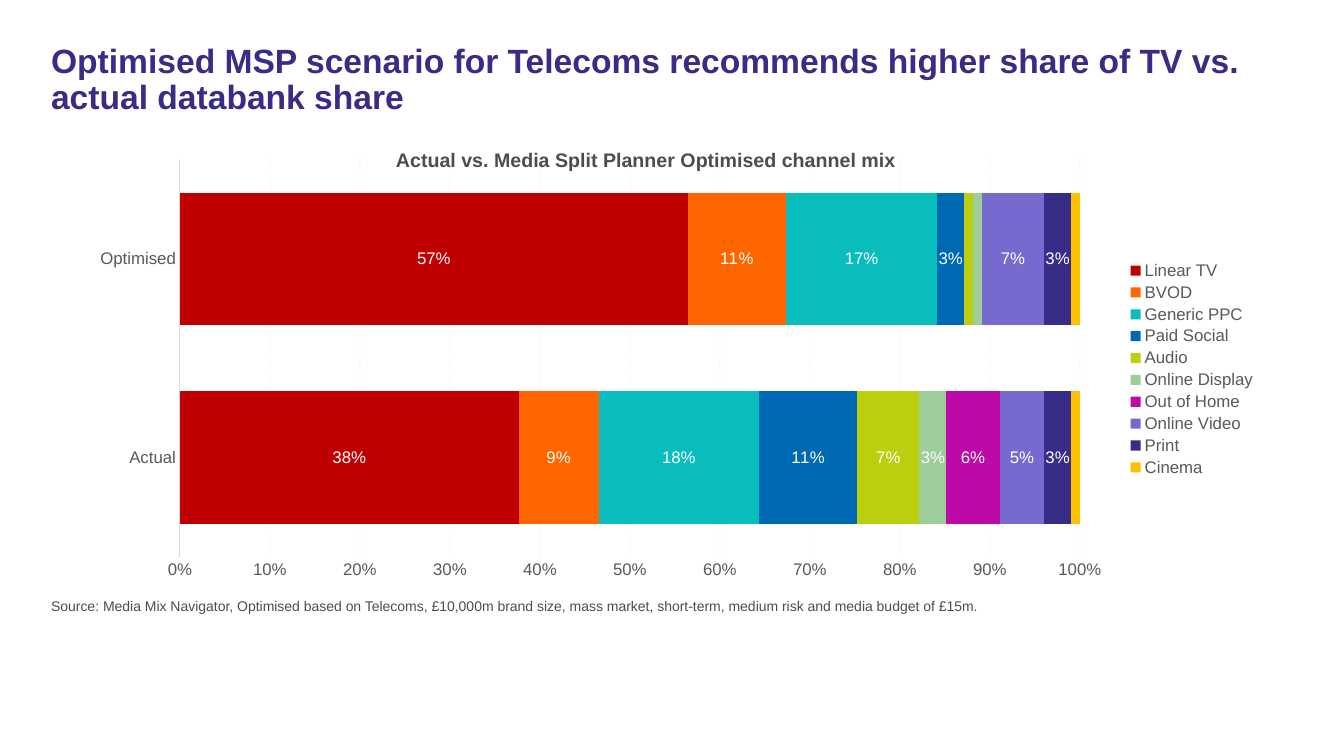
from lxml import etree
from pptx import Presentation
from pptx.chart.data import CategoryChartData
from pptx.dml.color import RGBColor
from pptx.enum.chart import XL_CHART_TYPE, XL_LABEL_POSITION, XL_LEGEND_POSITION, XL_TICK_MARK
from pptx.enum.dml import MSO_LINE
from pptx.enum.text import MSO_ANCHOR, MSO_AUTO_SIZE, PP_ALIGN
from pptx.oxml.ns import qn
from pptx.util import Emu, Pt

BAR_STACKED_100 = XL_CHART_TYPE.BAR_STACKED_100
LABEL_CENTER = XL_LABEL_POSITION.CENTER
LEGEND_RIGHT = XL_LEGEND_POSITION.RIGHT
NO_TICK = XL_TICK_MARK.NONE
DASH = MSO_LINE.DASH
TOP = MSO_ANCHOR.TOP
NO_AUTOFIT = MSO_AUTO_SIZE.NONE
LEFT = PP_ALIGN.LEFT

EMU_PER_PX = 914400 / 100.8
FONT = "Arial"
PURPLE, DARK_GREY, GREY, LIGHT_GREY, WHITE = "372D87", "4D4D4D", "595959", "D9D9D9", "FFFFFF"

CATEGORIES = ["Actual", "Optimised"]
# Channel, actual share, optimised share, colour, categories with a label
CHANNELS = [
    ("Linear TV", 0.38, 0.57, "C00000", CATEGORIES),
    ("BVOD", 0.09, 0.11, "FF6600", CATEGORIES),
    ("Generic PPC", 0.18, 0.17, "09BDBD", CATEGORIES),
    ("Paid Social", 0.11, 0.03, "0069B4", CATEGORIES),
    ("Audio", 0.07, 0.01, "BCCF0F", ["Actual"]),
    ("Online Display", 0.03, 0.01, "9CCD9A", ["Actual"]),
    ("Out of Home", 0.06, 0, "BD09A7", ["Actual"]),
    ("Online Video", 0.05, 0.07, "766ACE", CATEGORIES),
    ("Print", 0.03, 0.03, "372D87", CATEGORIES),
    ("Cinema", 0.01, 0.01, "FFC000", []),
]


def px(length):
    return Emu(round(length * EMU_PER_PX))


def color(hex_string):
    return RGBColor.from_string(hex_string)


def format_font(font, size, hex_string, bold=False):
    font.name = FONT
    font.size = Pt(size)
    font.bold = bold
    font.color.rgb = color(hex_string)


def write(shape, text, size=12, hex_string=DARK_GREY, bold=False, line_spacing=1.0):
    frame = shape.text_frame
    frame.word_wrap = True
    frame.auto_size = NO_AUTOFIT
    frame.vertical_anchor = TOP
    frame.text = text
    paragraph = frame.paragraphs[0]
    paragraph.alignment = LEFT
    paragraph.line_spacing = line_spacing
    paragraph.space_before = Pt(0)
    format_font(paragraph.runs[0].font, size, hex_string, bold)
    return paragraph


class SlideBuilder:
    def __init__(self, presentation):
        self.slide = presentation.slides.add_slide(presentation.slide_layouts[1])

    def placeholder(self, index, box, text, **style):
        shape = self.slide.placeholders[index]
        shape.left, shape.top, shape.width, shape.height = map(px, box)
        return write(shape, text, **style)

    def title(self, box, text, **style):
        self.placeholder(0, box, text, **style)

    def body(self, box, text, **style):
        paragraph = self.placeholder(1, box, text, **style)
        properties = paragraph._p.get_or_add_pPr()
        properties.set("marL", "0")
        properties.set("indent", "0")
        properties.insert_element_before(
            properties.makeelement(qn("a:buNone")), "a:tabLst", "a:defRPr", "a:extLst")

    def text(self, box, text, **style):
        write(self.slide.shapes.add_textbox(*map(px, box)), text, **style)

    def channel_chart(self, box, plot_box):
        data = CategoryChartData(number_format="0%")
        data.categories = CATEGORIES
        for name, actual, optimised, _, _ in CHANNELS:
            data.add_series(name, (actual, optimised))
        chart = self.slide.shapes.add_chart(BAR_STACKED_100, *map(px, box), data).chart
        chart.has_title = False
        format_font(chart.font, 10, "000000")
        plot = chart.plots[0]
        plot.gap_width, plot.overlap = 50, 100
        for series, channel in zip(plot.series, CHANNELS):
            self.style_series(series, *channel[3:])
        self.style_axes(chart)
        chart.has_legend = True
        chart.legend.position = LEGEND_RIGHT
        chart.legend.include_in_layout = False
        format_font(chart.legend.font, 12, GREY)
        self.place_plot(chart, box, plot_box)

    def style_series(self, series, hex_string, labelled):
        series.format.fill.solid()
        series.format.fill.fore_color.rgb = color(hex_string)
        if not labelled:
            return
        labels = series.data_labels
        labels.show_value = True
        labels.position = LABEL_CENTER
        labels.number_format = "0%"
        labels.number_format_is_linked = False
        format_font(labels.font, 12, WHITE)
        # Hide the labels of the narrow segments
        hidden = [index for index, name in enumerate(CATEGORIES) if name not in labelled]
        for position, index in enumerate(hidden):
            label = etree.Element(qn("c:dLbl"))
            etree.SubElement(label, qn("c:idx")).set("val", str(index))
            etree.SubElement(label, qn("c:delete")).set("val", "1")
            labels._element.insert(position, label)

    def style_axes(self, chart):
        category_axis, value_axis = chart.category_axis, chart.value_axis
        for axis in (category_axis, value_axis):
            axis.major_tick_mark = axis.minor_tick_mark = NO_TICK
            format_font(axis.tick_labels.font, 12, GREY)
        category_axis.format.line.color.rgb = color(LIGHT_GREY)
        category_axis.format.line.width = Pt(0.75)
        value_axis.format.line.fill.background()
        value_axis.minimum_scale, value_axis.maximum_scale, value_axis.major_unit = 0, 1, 0.1
        value_axis.tick_labels.number_format = "0%"
        value_axis.tick_labels.number_format_is_linked = False
        value_axis.has_major_gridlines = True
        grid = value_axis.major_gridlines.format.line
        grid.color.rgb = color(LIGHT_GREY)
        grid.width = Pt(0.5)
        grid.dash_style = DASH
        grid_color = value_axis.major_gridlines._xAx.find(".//" + qn("c:majorGridlines")).find(
            ".//" + qn("a:srgbClr"))
        etree.SubElement(grid_color, qn("a:alpha")).set("val", "30000")

    def place_plot(self, chart, box, plot_box):
        left, top, width, height = box
        plot_left, plot_top, plot_width, plot_height = plot_box
        area = chart._chartSpace.find(".//" + qn("c:plotArea"))
        for layout in area.findall(qn("c:layout")):
            area.remove(layout)
        layout = etree.Element(qn("c:layout"))
        manual = etree.SubElement(layout, qn("c:manualLayout"))
        for tag, value in (
            ("layoutTarget", "inner"), ("xMode", "edge"), ("yMode", "edge"),
            ("x", (plot_left - left) / width), ("y", (plot_top - top) / height),
            ("w", plot_width / width), ("h", plot_height / height),
        ):
            etree.SubElement(manual, qn("c:" + tag)).set("val", str(value))
        area.insert(0, layout)


def main():
    presentation = Presentation()
    presentation.slide_width, presentation.slide_height = px(1344), px(756)
    builder = SlideBuilder(presentation)

    # Title and source
    builder.title(
        (41, 39, 1250, 113),
        "Optimised MSP scenario for Telecoms recommends higher share of TV vs. actual databank share",
        size=24, hex_string=PURPLE, bold=True, line_spacing=0.9)
    builder.body(
        (41, 592, 1250, 33),
        "Source: Media Mix Navigator, Optimised based on Telecoms, £10,000m brand size, "
        "mass market, short-term, medium risk and media budget of £15m.",
        size=10)

    # Channel mix chart with its heading
    builder.channel_chart((77, 151, 1190, 436), plot_box=(180, 160, 900, 397))
    builder.text(
        (386, 143, 672, 34), "Actual vs. Media Split Planner Optimised channel mix",
        size=14, bold=True)

    presentation.save("out.pptx")


if __name__ == "__main__":
    main()
